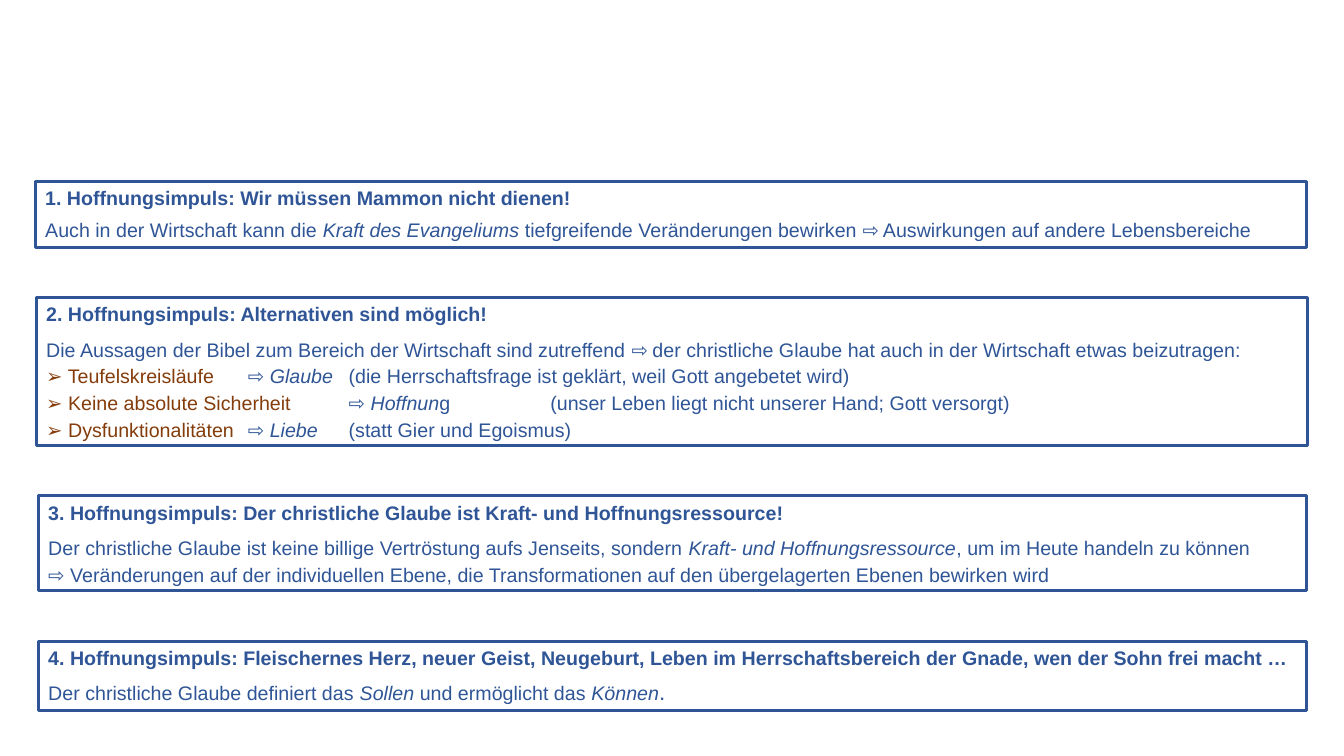
from copy import deepcopy

from lxml import etree
from pptx import Presentation
from pptx.dml.color import RGBColor
from pptx.enum.shapes import MSO_SHAPE as Shape
from pptx.enum.text import MSO_ANCHOR as Anchor, MSO_AUTO_SIZE as Fit, PP_ALIGN as Align
from pptx.oxml.ns import qn
from pptx.util import Inches, Pt

BLUE, BROWN = "2F5597", "843C0B"


def paint(target, color):
    target.rgb = RGBColor.from_string(color)


def write(par, text, size=14, color=BLUE, bold=False, italic=False):
    """Add formatted text; each newline becomes a line break."""
    for i, line in enumerate(text.split("\n")):
        if i:
            par.add_line_break()
            # The break keeps the text size, so the line height stays even
            par._p[-1].insert(0, deepcopy(run._r.rPr))
        if not line:
            continue
        run = par.add_run()
        run.text = line
        font = run.font
        font.name, font.size = "Arial", Pt(size)
        font.bold, font.italic = bold, italic
        paint(font.color, color)


def add_tabs(par, stops):
    tabs = etree.SubElement(par._p.get_or_add_pPr(), qn("a:tabLst"))
    for stop in stops:
        etree.SubElement(tabs, qn("a:tab"), pos=str(Inches(stop)), algn="l")


def add_box(slide, place, title, parts, gap=6, after=False, pitch=None, stops=()):
    """Framed box with a bold heading and one paragraph of (text, format) parts."""
    box = slide.shapes.add_shape(Shape.RECTANGLE, *map(Inches, place))
    box.shadow.inherit = False
    box.fill.background()
    box.line.width = Pt(2.25)
    paint(box.line.color, BLUE)

    frame = box.text_frame
    frame.word_wrap = True
    frame.auto_size = Fit.SHAPE_TO_FIT_TEXT
    frame.vertical_anchor = Anchor.TOP
    head, body = frame.paragraphs[0], frame.add_paragraph()
    head.alignment = body.alignment = Align.LEFT
    if after:
        head.space_after = Pt(gap)
    else:
        body.space_before = Pt(gap)
    if pitch:
        body.line_spacing = pitch
    if stops:
        add_tabs(body, stops)
    write(head, title, bold=True)
    for text, form in parts:
        write(body, text, **form)


def main():
    deck = Presentation()
    deck.slide_width, deck.slide_height = Inches(13.33), Inches(7.5)
    slide = deck.slides.add_slide(deck.slide_layouts[6])
    plain, slant, brown = {}, {"italic": True}, {"color": BROWN}

    # First impulse
    add_box(slide, (0.35, 1.8, 12.61, 0.66),
            "1. Hoffnungsimpuls: Wir müssen Mammon nicht dienen!",
            [("Auch in der Wirtschaft kann die ", plain),
             ("Kraft des Evangeliums", slant),
             (" tiefgreifende Veränderungen bewirken ⇨ Auswirkungen auf andere "
              "Lebensbereiche", plain)])

    # Second impulse: problem, answer and reason, set with tabs
    rows = [("Teufelskreisläufe \t", "Glaube",
             " \t(die Herrschaftsfrage ist geklärt, weil Gott angebetet wird)"),
            ("Keine absolute Sicherheit\t", "Hoffnun",
             "g \t(unser Leben liegt nicht unserer Hand; Gott versorgt)"),
            ("Dysfunktionalitäten \t", "Liebe ", "\t(statt Gier und Egoismus)")]
    parts = [("Die Aussagen der Bibel zum Bereich der Wirtschaft sind zutreffend ⇨ der "
              "christliche Glaube hat auch in der Wirtschaft etwas beizutragen:", plain)]
    for issue, hope, reason in rows:
        parts[-1] = (parts[-1][0] + "\n", plain)
        parts += [("➢ " + issue, brown), ("⇨ ", plain), (hope, slant), (reason, plain)]
    add_box(slide, (0.36, 2.95, 12.61, 1.47),
            "2. Hoffnungsimpuls: Alternativen sind möglich!",
            parts, pitch=1.14, stops=(2, 3, 5))

    # Third impulse
    add_box(slide, (0.38, 4.92, 12.58, 0.94),
            "3. Hoffnungsimpuls: Der christliche Glaube ist Kraft- und Hoffnungsressource!",
            [("Der christliche Glaube ist keine billige Vertröstung aufs Jenseits, sondern ",
              plain),
             ("Kraft- und Hoffnungsressource", slant),
             (", um im Heute handeln zu können\n⇨ Veränderungen auf der individuellen Ebene, "
              "die Transformationen auf den übergelagerten Ebenen bewirken wird", plain)],
            after=True, pitch=1.14)

    # Fourth impulse
    add_box(slide, (0.38, 6.36, 12.58, 0.69),
            "4. Hoffnungsimpuls: Fleischernes Herz, neuer Geist, Neugeburt, Leben im "
            "Herrschaftsbereich der Gnade, wen der Sohn frei macht …",
            [("Der christliche Glaube definiert das ", plain), ("Sollen", slant),
             (" und ermöglicht das ", plain), ("Können", slant), (".", {"size": 16})],
            after=True)

    deck.save("out.pptx")


if __name__ == "__main__":
    main()
